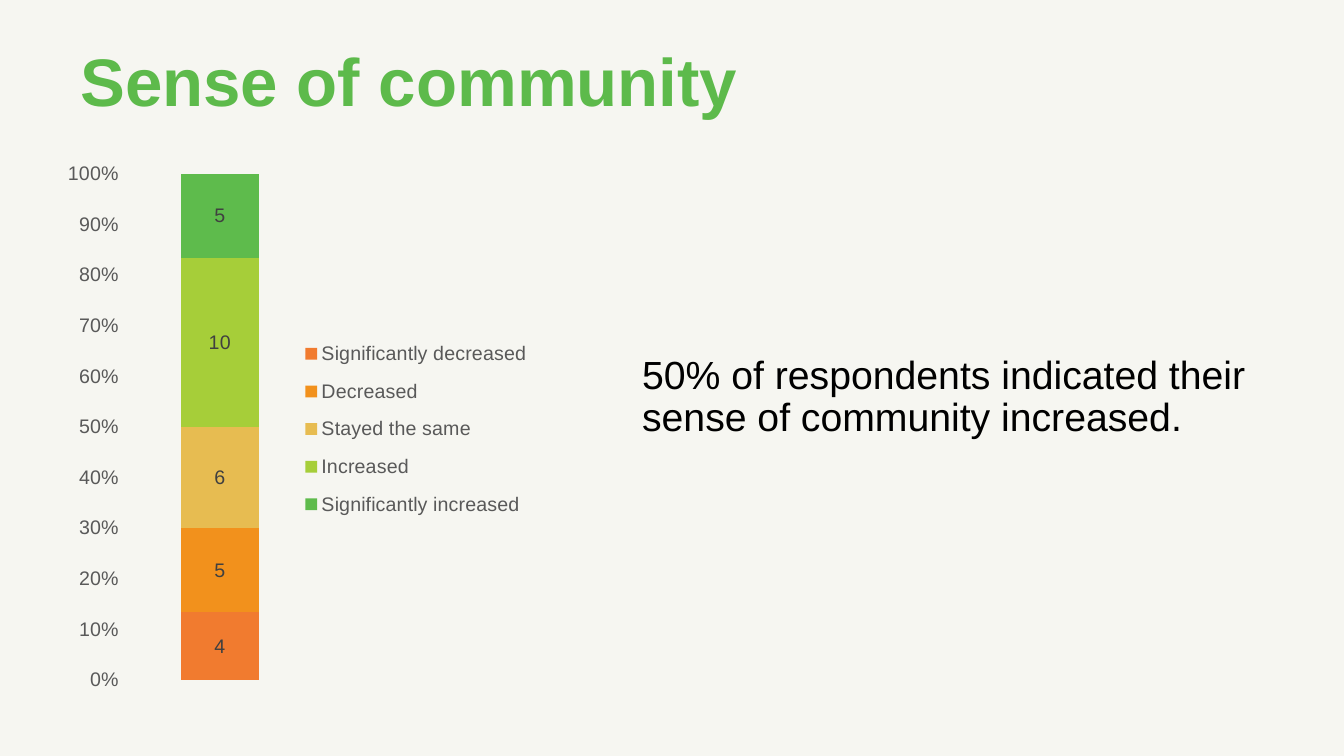
from dataclasses import dataclass
from typing import Any

from lxml import etree
from pptx import Presentation
from pptx import util as u
from pptx.chart import data
from pptx.dml.color import RGBColor
from pptx.enum import chart as ch
from pptx.enum import text
from pptx.oxml import ns

FONT = "Arial"
BACKGROUND = RGBColor(0xF6, 0xF6, 0xF1)
TITLE_GREEN = RGBColor(0x5D, 0xBA, 0x4B)
BLACK = RGBColor(0x00, 0x00, 0x00)
AXIS_GREY = RGBColor(0x59, 0x59, 0x59)
LABEL_GREY = RGBColor(0x40, 0x40, 0x40)
ORANGE_RED = RGBColor(0xF1, 0x7B, 0x2F)
ORANGE = RGBColor(0xF2, 0x91, 0x1C)
YELLOW = RGBColor(0xE7, 0xBC, 0x51)
LIME = RGBColor(0xA6, 0xCE, 0x39)
GREEN = RGBColor(0x5E, 0xBB, 0x4C)


@dataclass
class TextBlock:
    words: str
    at: tuple[float, float, float, float]
    size: int
    color: RGBColor
    bold: bool
    anchor: text.MSO_ANCHOR
    spacing: dict[str, Any]


@dataclass
class Answer:
    name: str
    count: int
    color: RGBColor


TEXTS = [
    TextBlock("Sense of community", (0.7, 0.42, 12.15, 0.83), 48, TITLE_GREEN, True,
              text.MSO_ANCHOR.BOTTOM, {"line_spacing": 0.9}),
    TextBlock("50% of respondents indicated their sense of community increased.",
              (6.27, 3.48, 6.68, 1.14), 28, BLACK, False, text.MSO_ANCHOR.TOP,
              {"line_spacing": 0.9, "space_before": u.Pt(10), "space_after": u.Pt(6)}),
]

ANSWERS = [
    Answer("Significantly decreased", 4, ORANGE_RED),
    Answer("Decreased", 5, ORANGE),
    Answer("Stayed the same", 6, YELLOW),
    Answer("Increased", 10, LIME),
    Answer("Significantly increased", 5, GREEN),
]


def set_all(target: Any, values: dict[str, Any]) -> None:
    for name, value in values.items():
        setattr(target, name, value)


def set_font(font: Any, size: int, color: RGBColor, bold: bool = False) -> None:
    set_all(font, {"name": FONT, "size": u.Pt(size), "bold": bold})
    font.color.rgb = color


def add_text(page: Any, block: TextBlock) -> None:
    box = page.shapes.add_textbox(*map(u.Inches, block.at))
    set_all(box.text_frame, {"word_wrap": True, "vertical_anchor": block.anchor})
    para = box.text_frame.paragraphs[0]
    set_all(para, block.spacing)
    span = para.add_run()
    span.text = block.words
    set_font(span.font, block.size, block.color, block.bold)


def make_layout(x: float, y: float, w: float, h: float, inner: bool = False) -> Any:
    """Manual chart layout, as fractions of the chart's size."""
    layout = etree.Element(ns.qn("c:layout"))
    manual = etree.SubElement(layout, ns.qn("c:manualLayout"))
    settings = {"layoutTarget": "inner"} if inner else {}
    settings |= {"xMode": "edge", "yMode": "edge", "x": x, "y": y, "w": w, "h": h}
    for tag, value in settings.items():
        etree.SubElement(manual, ns.qn(f"c:{tag}")).set("val", str(value))
    return layout


def add_answer_chart(page: Any) -> None:
    answers = data.CategoryChartData()
    answers.categories = ["1"]
    for answer in ANSWERS:
        answers.add_series(answer.name, [answer.count])
    frame = page.shapes.add_chart(
        ch.XL_CHART_TYPE.COLUMN_STACKED_100,
        *map(u.Inches, (0.48, 1.47, 4.93, 5.62)), answers)
    chart = frame.chart
    chart.has_title = False
    set_font(chart.font, 14, BLACK)

    # Column segments and their labels
    plot = chart.plots[0]
    set_all(plot, {"gap_width": 150, "overlap": 100, "vary_by_categories": False})
    for series, answer in zip(plot.series, ANSWERS):
        series.format.fill.solid()
        series.format.fill.fore_color.rgb = answer.color
        labels = series.data_labels
        set_all(labels, {"show_value": True, "position": ch.XL_LABEL_POSITION.CENTER})
        set_font(labels.font, 14, LABEL_GREY)

    # Axes
    chart.category_axis.visible = False
    axis = chart.value_axis
    set_all(axis, {"has_major_gridlines": False, "minimum_scale": 0,
                   "maximum_scale": 1, "major_unit": 0.1,
                   "major_tick_mark": ch.XL_TICK_MARK.NONE,
                   "minor_tick_mark": ch.XL_TICK_MARK.NONE})
    set_all(axis.tick_labels, {"number_format": "0%", "number_format_is_linked": False})
    set_font(axis.tick_labels.font, 14, AXIS_GREY)
    axis.format.line.fill.background()

    # Legend beside the column
    chart.has_legend = True
    legend = chart.legend
    set_all(legend, {"position": ch.XL_LEGEND_POSITION.BOTTOM,
                     "include_in_layout": False})
    set_font(legend.font, 14, AXIS_GREY)

    # Placement of the plot and the legend
    plot_area = chart.element.find(".//" + ns.qn("c:plotArea"))
    legend_area = chart.element.find(".//" + ns.qn("c:legend"))
    for area in (plot_area, legend_area):
        for old in area.findall(ns.qn("c:layout")):
            area.remove(old)
    plot_area.insert(0, make_layout(0.15, 0.045, 0.39, 0.894, inner=True))
    legend_area.find(ns.qn("c:legendPos")).addnext(make_layout(0.49, 0.316, 0.5, 0.36))


def main() -> None:
    deck = Presentation()
    set_all(deck, {"slide_width": u.Inches(13.33), "slide_height": u.Inches(7.5)})
    page = deck.slides.add_slide(deck.slide_layouts[6])
    page.background.fill.solid()
    page.background.fill.fore_color.rgb = BACKGROUND
    for block in TEXTS:
        add_text(page, block)
    add_answer_chart(page)
    deck.save("out.pptx")


if __name__ == "__main__":
    main()
